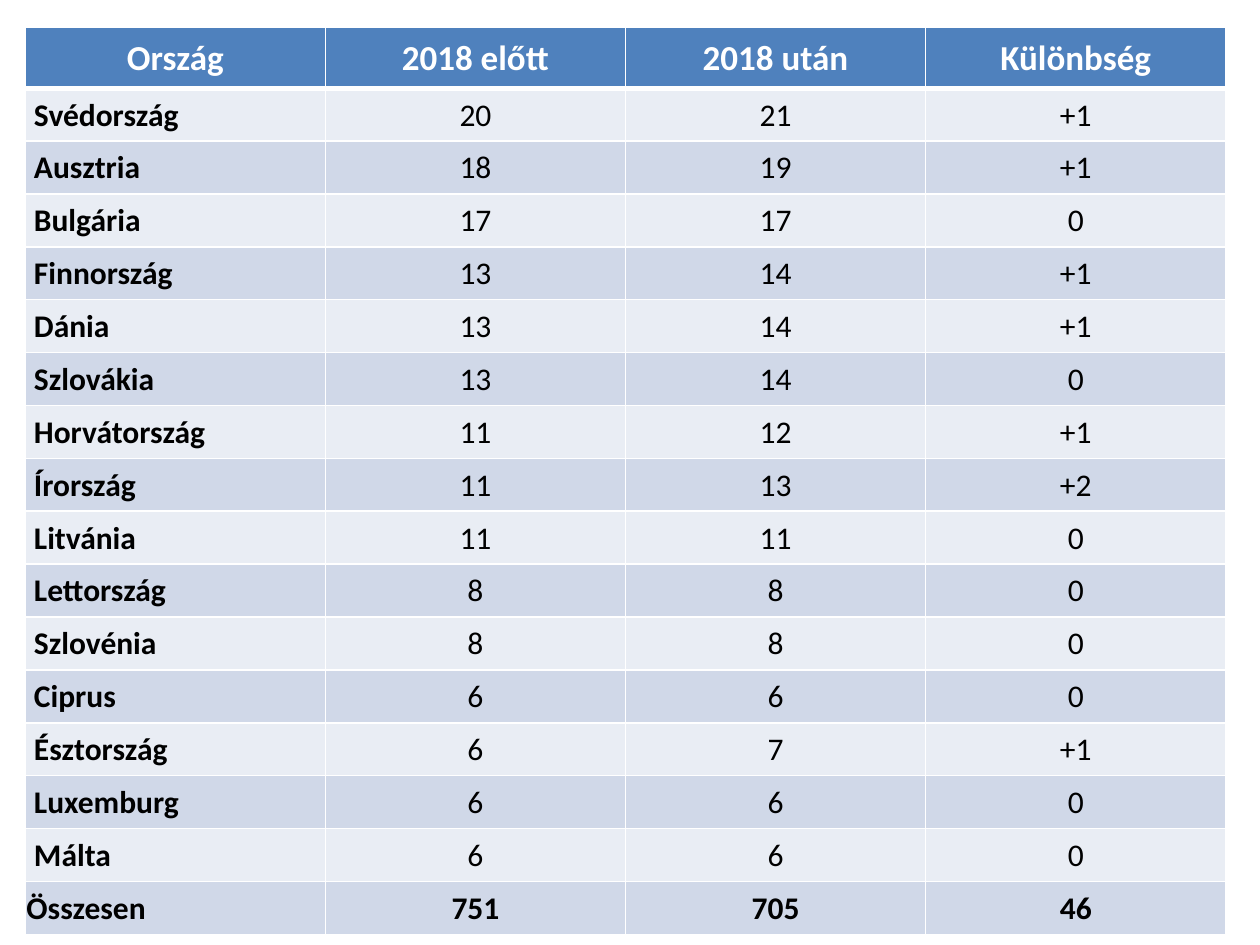
from lxml.etree import SubElement
from pptx import Presentation
from pptx.dml.color import RGBColor as RGB
from pptx.enum.text import MSO_ANCHOR as ANCHOR, PP_ALIGN as ALIGN
from pptx.oxml.ns import qn
from pptx.util import Inches, Pt

COLORS = {
    "header": "4F81BD",
    "light": "E9EDF4",
    "dark": "D0D8E8",
    "white": "FFFFFF",
    "black": "000000",
}
HEADER = ("Ország", "2018 előtt", "2018 után", "Különbség")
COUNTRIES = [
    ("Svédország", "20", "21", "+1"),
    ("Ausztria", "18", "19", "+1"),
    ("Bulgária", "17", "17", "0"),
    ("Finnország", "13", "14", "+1"),
    ("Dánia", "13", "14", "+1"),
    ("Szlovákia", "13", "14", "0"),
    ("Horvátország", "11", "12", "+1"),
    ("Írország", "11", "13", "+2"),
    ("Litvánia", "11", "11", "0"),
    ("Lettország", "8", "8", "0"),
    ("Szlovénia", "8", "8", "0"),
    ("Ciprus", "6", "6", "0"),
    ("Észtország", "6", "7", "+1"),
    ("Luxemburg", "6", "6", "0"),
    ("Málta", "6", "6", "0"),
]
TOTAL = ("Összesen", "751", "705", "46")


def write(tf, text, size=18, color="black", bold=False, align=ALIGN.CENTER, font="Calibri"):
    p = tf.paragraphs[0]
    p.alignment = align
    r = p.add_run()
    r.text = text
    r.font.name, r.font.size, r.font.bold = font, Pt(size), bold
    r.font.color.rgb = RGB.from_string(COLORS[color])


def set_borders(cell, **widths):
    """Draw white cell borders; widths are points keyed by side L, R, T, B."""
    tc_pr = cell._tc.get_or_add_tcPr()
    for side, width in widths.items():
        ln = SubElement(tc_pr, qn(f"a:ln{side}"), w=str(Pt(width)))
        fill = SubElement(ln, qn("a:solidFill"))
        SubElement(fill, qn("a:srgbClr"), val=COLORS["white"])


class SeatSlide:
    """Slide with its table style; lengths are in inches."""

    header_height, row_height = 0.48, 0.42
    inset, indent = 0.01, 0.06
    thin, thick = 1, 3

    def __init__(self, prs):
        self.s = prs.slides.add_slide(prs.slide_layouts[6])

    def cell(self, cell, fill, top, bottom, indent=0, **style):
        cell.vertical_anchor = ANCHOR.MIDDLE
        cell.margin_left = Inches(self.inset + indent)
        cell.margin_right = cell.margin_top = Inches(self.inset)
        cell.margin_bottom = 0
        set_borders(cell, L=self.thin, R=self.thin, T=top, B=bottom)
        cell.fill.solid()
        cell.fill.fore_color.rgb = RGB.from_string(COLORS[fill])
        write(cell.text_frame, **style)

    def table(self, rows, left, top, width):
        height = self.header_height + self.row_height * (len(rows) - 1)
        shape = self.s.shapes.add_table(
            len(rows), len(rows[0]), Inches(left), Inches(top), Inches(width), Inches(height))
        table = shape.table
        last = len(rows) - 1
        for i, row in enumerate(rows):
            table.rows[i].height = Inches(self.row_height if i else self.header_height)
            rules = {"top": self.thick if i == 1 else self.thin,
                     "bottom": self.thin if i else self.thick}
            for j, text in enumerate(row):
                if i == 0:
                    look = dict(fill="header", size=20, color="white", bold=True)
                else:
                    look = dict(fill="light" if i % 2 else "dark", bold=j == 0 or i == last)
                    if j == 0:
                        look.update(align=ALIGN.LEFT, indent=0 if i == last else self.indent)
                self.cell(table.cell(i, j), text=text, **rules, **look)


def main():
    prs = Presentation()
    prs.slide_width, prs.slide_height = Inches(10), Inches(7.5)
    SeatSlide(prs).table([HEADER, *COUNTRIES, TOTAL], left=0.2, top=0.22, width=9.53)
    prs.save("out.pptx")


if __name__ == "__main__":
    main()
